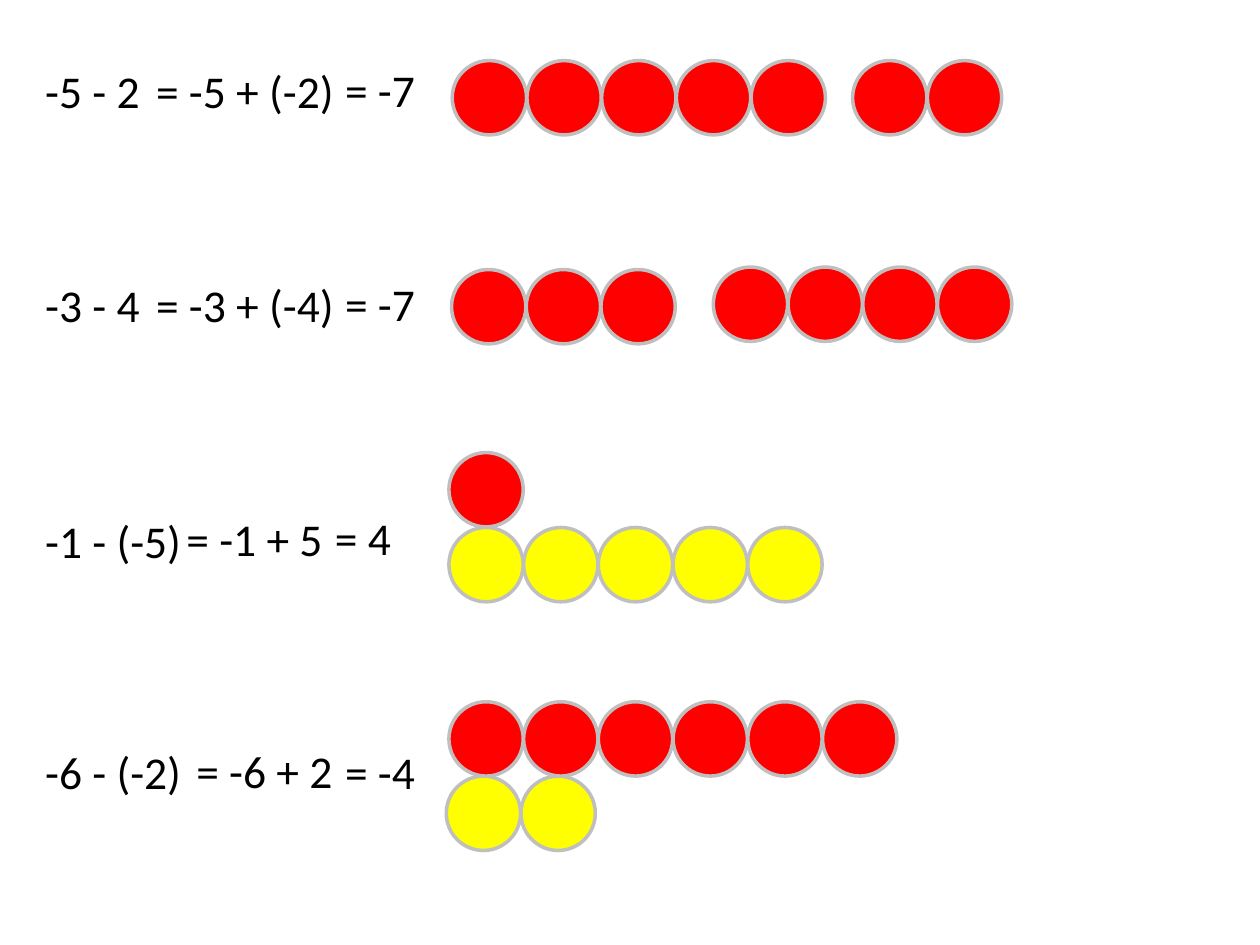
"""Builds a slide that shows integer subtraction with red and yellow counters."""
from pptx import Presentation
from pptx import util as u
from pptx.dml.color import RGBColor
from pptx.enum import shapes, text

COLORS = {"ink": "000000", "negative": "FF0000", "positive": "FFFF00", "rim": "BFBFBF"}

EXPRESSIONS = [
    [("-5 - 2", 18.7, 32.4), ("= -5 + (-2)", 82.1, 32.4), ("= -7", 190.1, 31.7)],
    [("-3 - 4", 18.7, 154.8), ("= -3 + (-4)", 82.1, 154.8), ("= -7", 190.1, 154.1)],
    [("-1 - (-5)", 18.7, 289.4), ("= -1 + 5", 99.4, 288.7), ("= 4", 184.3, 288)],
    [("-6 - (-2)", 18.7, 421.9), ("= -6 + 2", 105.1, 421.2), ("= -4", 190.1, 421.9)],
]

COUNTERS = [
    [("negative", 5, 258.4, 34.6), ("negative", 2, 487.2, 34.6)],
    [("negative", 3, 258, 154), ("negative", 4, 407.6, 152.6)],
    [("positive", 5, 256.5, 301.4), ("negative", 1, 256.5, 258.6)],
    [("positive", 2, 255, 443.5), ("negative", 6, 256.5, 401)],
]


def write(frame, words, font="Calibri", size=26, color="ink"):
    """Put one formatted line of text in a frame."""
    para = frame.paragraphs[0]
    para.alignment = text.PP_ALIGN.LEFT
    span = para.add_run()
    span.text = words
    span.font.name = font
    span.font.size = u.Pt(size)
    span.font.color.rgb = RGBColor.from_string(COLORS[color])


class Board:
    """Holds the style and the current slide."""

    diameter = 42.5
    pitch = 42.7
    rim_width = 2
    text_width = 124
    text_height = 38.9

    def __init__(self, page):
        """Start drawing on a page."""
        self.page = page

    def expression(self, words, left, top):
        """Add one part of an equation."""
        box = self.page.shapes.add_textbox(
            u.Pt(left), u.Pt(top), u.Pt(self.text_width), u.Pt(self.text_height))
        box.text_frame.word_wrap = True
        box.text_frame.auto_size = text.MSO_AUTO_SIZE.SHAPE_TO_FIT_TEXT
        write(box.text_frame, words)

    def counter(self, group, color, left, top):
        """Add one round counter to a group."""
        disc = group.shapes.add_shape(
            shapes.MSO_SHAPE.OVAL, u.Pt(left), u.Pt(top), u.Pt(self.diameter), u.Pt(self.diameter))
        disc.shadow.inherit = False
        disc.fill.solid()
        disc.fill.fore_color.rgb = RGBColor.from_string(COLORS[color])
        disc.line.color.rgb = RGBColor.from_string(COLORS["rim"])
        disc.line.width = u.Pt(self.rim_width)

    def counters(self, rows):
        """Add a group of counter rows."""
        group = self.page.shapes.add_group_shape()
        for color, count, left, top in rows:
            for index in range(count):
                self.counter(group, color, left + index * self.pitch, top)


def main():
    """Build and save the deck."""
    deck = Presentation()
    deck.slide_width, deck.slide_height = u.Pt(720), u.Pt(540)
    board = Board(deck.slides.add_slide(deck.slide_layouts[6]))
    for parts in EXPRESSIONS:
        for words, left, top in parts:
            board.expression(words, left, top)
    for rows in COUNTERS:
        board.counters(rows)
    deck.save("out.pptx")


if __name__ == "__main__":
    main()
